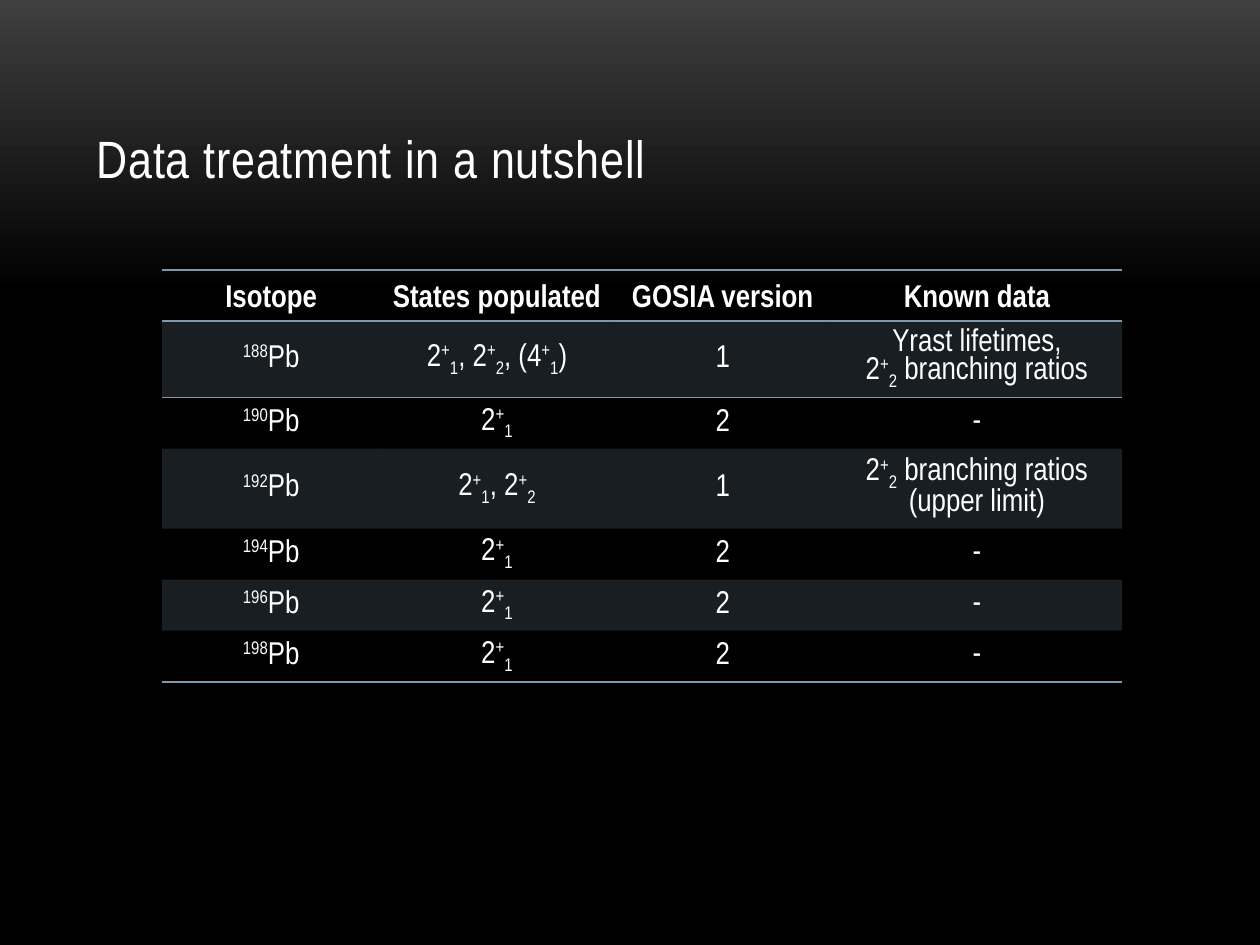
from copy import deepcopy

from lxml import etree
from pptx import Presentation
from pptx.dml.color import RGBColor
from pptx.enum import text
from pptx.oxml import ns
from pptx.util import Pt

TITLE = "Data treatment in a nutshell"
HEADINGS = ["Isotope", "States populated", "GOSIA version", "Known data"]
FIRST, SECOND = "2|^+|_1", "2|^+|_2"
LIMIT = "(upper limit)"
ISOTOPES = [
    ("188", f"{FIRST}|, {SECOND}|, (4|^+|_1|)", "1", f"Yrast lifetimes,\n{SECOND}| branching ratios"),
    ("190", FIRST, "2", "-"),
    ("192", f"{FIRST}|, {SECOND}", "1", f"{SECOND}| branching ratios\n{LIMIT}"),
    ("194", FIRST, "2", "-"),
    ("196", FIRST, "2", "-"),
    ("198", FIRST, "2", "-"),
]
ROWS = [HEADINGS] + [(f"^{mass}|Pb", *rest) for mass, *rest in ISOTOPES]
COLUMN_WIDTHS = [124.6, 133.4, 124.6, 166]
ROW_HEIGHT = 29.2
STATES_COLUMN, KNOWN_COLUMN = 1, 3
FONT, WHITE, ACCENT = "Arial Narrow", "FFFFFF", "7E97AD"
NO_STYLE = "{2D5ABB26-0587-4C30-8999-92F81FD0307C}"
BASELINES = {"^": "30000", "_": "-25000"}


def color(value):
    return RGBColor.from_string(value)


def style(paragraph, size, bold=False):
    font = paragraph.font
    font.name, font.size, font.bold = FONT, Pt(size), bold
    font.color.rgb = color(WHITE)


def write(paragraph, markup):
    for piece in markup.split("|"):
        run = paragraph.add_run()
        baseline = BASELINES.get(piece[0])
        run.text = piece[1:] if baseline else piece
        if baseline:
            run._r.get_or_add_rPr().set("baseline", baseline)


def set_borders(cell, ruled):
    properties = cell._tc.get_or_add_tcPr()
    for side in ruled:
        line = etree.SubElement(properties, ns.qn(f"a:ln{side}"), w=str(Pt(1)))
        fill = etree.SubElement(line, ns.qn("a:solidFill"))
        etree.SubElement(fill, ns.qn("a:srgbClr"), val=ACCENT)


def set_band(cell, banded):
    if not banded:
        cell.fill.background()
        return
    cell.fill.solid()
    cell.fill.fore_color.rgb = color(ACCENT)
    tint = cell._tc.tcPr.find(ns.qn("a:solidFill"))[0]
    etree.SubElement(tint, ns.qn("a:alpha"), val="20000")


def set_margins(cell, header, column):
    if header:
        cell.margin_left = cell.margin_right = Pt(3.6)
        cell.margin_bottom = Pt(4.6)
    elif column in (STATES_COLUMN, KNOWN_COLUMN):
        cell.margin_left = cell.margin_right = cell.margin_top = Pt(0.72)
        cell.margin_bottom = Pt(1.2)


def add_background(slide):
    fill = slide.background.fill
    fill.gradient()
    fill.gradient_angle = 270
    stop_list = slide._element.xpath(".//p:bgPr//a:gsLst")[0]
    stop_list.append(deepcopy(stop_list[-1]))
    for stop, (position, value) in zip(
        fill.gradient_stops, [(0, "3F3F3F"), (0.31, "000000"), (1, "000000")]
    ):
        stop.position = position
        stop.color.rgb = color(value)


def add_title(slide):
    frame = slide.shapes.add_textbox(Pt(48), Pt(21.6), Pt(624), Pt(90)).text_frame
    frame.word_wrap = True
    frame.vertical_anchor = text.MSO_ANCHOR.BOTTOM
    heading = frame.paragraphs[0]
    write(heading, TITLE)
    heading.runs[0]._r.get_or_add_rPr().set("spc", "50")
    style(heading, 30)


def fill_cell(cell, row, column, content):
    header = row == 0
    cell.vertical_anchor = text.MSO_ANCHOR.BOTTOM if header else text.MSO_ANCHOR.MIDDLE
    set_margins(cell, header, column)
    for index, markup in enumerate(content.split("\n")):
        frame = cell.text_frame
        paragraph = frame.add_paragraph() if index else frame.paragraphs[0]
        paragraph.alignment = text.PP_ALIGN.CENTER
        paragraph.line_spacing = 1.0 if markup == LIMIT else 0.9
        write(paragraph, markup)
        style(paragraph, 18, header)
    set_borders(cell, {0: "TB", 1: "T", len(ROWS) - 1: "B"}.get(row, ""))
    set_band(cell, row % 2 == 1)


def add_isotope_table(slide):
    graphic = slide.shapes.add_table(
        len(ROWS), len(HEADINGS), Pt(92.7), Pt(154.2),
        Pt(sum(COLUMN_WIDTHS)), Pt(ROW_HEIGHT * len(ROWS)),
    )
    table = graphic.table
    table.first_row = table.horz_banding = False
    graphic._element.xpath(".//a:tableStyleId")[0].text = NO_STYLE
    for column, width in zip(table.columns, COLUMN_WIDTHS):
        column.width = Pt(width)
    for row, contents in enumerate(ROWS):
        lines = max(content.count("\n") for content in contents)
        table.rows[row].height = Pt(ROW_HEIGHT + 14.6 * lines)
        for column, content in enumerate(contents):
            fill_cell(table.cell(row, column), row, column, content)


def main():
    presentation = Presentation()
    presentation.slide_width, presentation.slide_height = Pt(720), Pt(540)
    slide = presentation.slides.add_slide(presentation.slide_layouts[6])
    add_background(slide)
    add_title(slide)
    add_isotope_table(slide)
    presentation.save("out.pptx")


if __name__ == "__main__":
    main()
